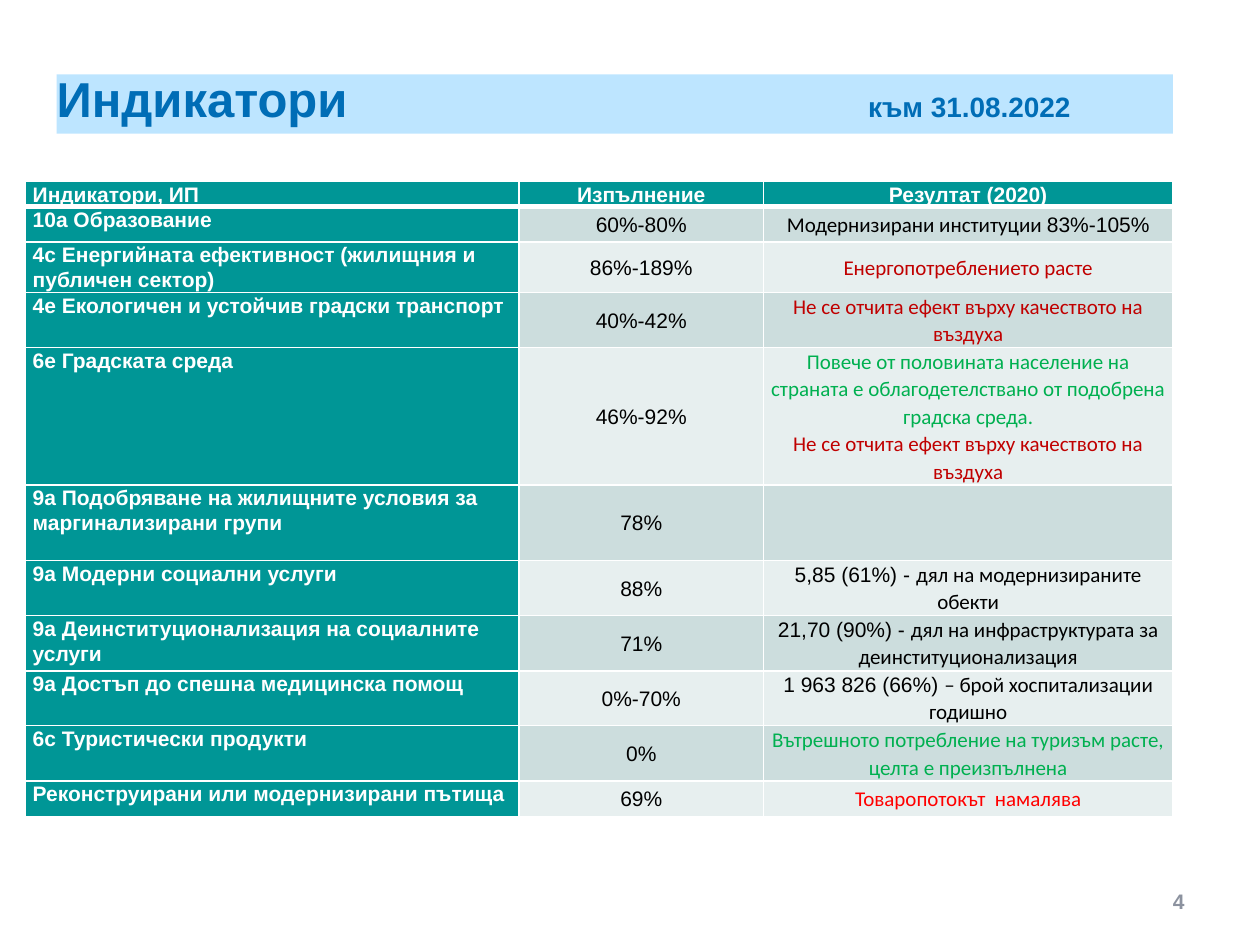
from dataclasses import dataclass

from lxml.etree import SubElement
from pptx import Presentation
from pptx.dml.color import RGBColor
from pptx.enum.text import MSO_ANCHOR, MSO_AUTO_SIZE, PP_ALIGN
from pptx.oxml.ns import qn
from pptx.util import Inches, Pt


@dataclass(frozen=True)
class Theme:
    head: str = "Arial"
    body: str = "Calibri"
    title_size: int = 28
    date_size: int = 16
    text_size: int = 12
    blue: str = "006DB6"
    pale_blue: str = "BDE5FF"
    teal: str = "009696"
    bands: tuple = ("CCDDDD", "E7EFEF")
    white: str = "FFFFFF"
    black: str = "000000"
    grey: str = "8C929F"
    dark_red: str = "C00000"
    red: str = "FF0000"
    green: str = "00B050"


T = Theme()

TITLE, DATE, PAGE = "Индикатори", "към 31.08.2022", "4"
HEADER = ("Индикатори, ИП", "Изпълнение", "Резултат (2020)")
COL_WIDTHS = (3.92, 1.94, 3.25)
HEADER_HEIGHT = 0.2
NO_AIR_EFFECT = ("Не се отчита ефект върху качеството на въздуха", T.body, T.dark_red)

# Each row: height, indicator, progress, result paragraphs made of (text, font, colour) runs.
ROWS = [
    (0.28, "10а Образование", "60%-80%",
     [[("Модернизирани институции ", T.body, T.black), ("83%-105%", T.head, T.black)]]),
    (0.39, "4с Енергийната ефективност (жилищния и публичен сектор)", "86%-189%",
     [[("Енергопотреблението расте", T.body, T.dark_red)]]),
    (0.44, "4е Екологичен и устойчив градски транспорт", "40%-42%", [[NO_AIR_EFFECT]]),
    (1.09, "6e Градската среда", "46%-92%",
     [[("Повече от половината население на страната е облагодетелствано от "
        "подобрена градска среда.", T.body, T.green)],
      [NO_AIR_EFFECT]]),
    (0.6, "9а Подобряване на жилищните условия за маргинализирани групи", "78%", []),
    (0.43, "9а Модерни социални услуги", "88%",
     [[("5,85 (61%) - ", T.head, T.black),
       ("дял на модернизираните обекти", T.body, T.black)]]),
    (0.44, "9а Деинституционализация на социалните услуги", "71%",
     [[("21,70 (90%) - ", T.head, T.black),
       ("дял на инфраструктурата за деинституционализация", T.body, T.black)]]),
    (0.43, "9а Достъп до спешна медицинска помощ", "0%-70%",
     [[("1 963 826 (66%) ", T.head, T.black),
       ("– брой хоспитализации годишно", T.body, T.black)]]),
    (0.44, "6с Туристически продукти", "0%",
     [[("Вътрешното потребление на туризъм расте, целта е преизпълнена",
        T.body, T.green)]]),
    (0.28, "Реконструирани или модернизирани пътища", "69%",
     [[("Товаропотокът  намалява", T.body, T.red)]]),
]


def add_run(p, text, font, color, size=T.text_size, bold=False):
    r = p.add_run()
    r.text = text
    r.font.name = font
    r.font.size = Pt(size)
    r.font.bold = bold
    r.font.color.rgb = RGBColor.from_string(color)


def set_margins(obj, side=0):
    obj.margin_left = obj.margin_right = Inches(side)
    obj.margin_top = obj.margin_bottom = 0


def set_borders(cell, widths):
    tc_pr = cell._tc.get_or_add_tcPr()
    for side, width in widths.items():
        ln = SubElement(tc_pr, qn(f"a:ln{side}"), w=str(Pt(width)))
        fill = SubElement(ln, qn("a:solidFill"))
        SubElement(fill, qn("a:srgbClr"), val=T.white)


def fill_cell(cell, paragraphs, fill, align, anchor, bold, borders):
    set_borders(cell, borders)
    cell.fill.solid()
    cell.fill.fore_color.rgb = RGBColor.from_string(fill)
    set_margins(cell, 0.06)
    cell.vertical_anchor = anchor
    tf = cell.text_frame
    for i, runs in enumerate(paragraphs):
        p = tf.add_paragraph() if i else tf.paragraphs[0]
        p.alignment = align
        p.line_spacing = 1.07
        for run in runs:
            add_run(p, *run, bold=bold)


def add_title(s):
    sp = s.shapes.title
    sp.left, sp.top, sp.width, sp.height = map(Inches, (0.45, 0.59, 8.86, 0.47))
    sp.fill.solid()
    sp.fill.fore_color.rgb = RGBColor.from_string(T.pale_blue)
    tf = sp.text_frame
    tf.auto_size = MSO_AUTO_SIZE.NONE
    tf.vertical_anchor = MSO_ANCHOR.TOP
    set_margins(tf)
    p = tf.paragraphs[0]
    p.alignment = PP_ALIGN.LEFT
    p.line_spacing = Pt(30)
    tabs = SubElement(p._p.get_or_add_pPr(), qn("a:tabLst"))
    SubElement(tabs, qn("a:tab"), pos=str(Inches(6.44)), algn="l")
    add_run(p, TITLE + "\t", T.head, T.blue, T.title_size, True)
    add_run(p, DATE, T.head, T.blue, T.date_size, True)


def add_indicators(s):
    heights = [HEADER_HEIGHT] + [row[0] for row in ROWS]
    table = s.shapes.add_table(
        len(heights), len(COL_WIDTHS), Inches(0.2), Inches(1.44),
        Inches(sum(COL_WIDTHS)), Inches(sum(heights))).table
    for col, width in zip(table.columns, COL_WIDTHS):
        col.width = Inches(width)
    for row, height in zip(table.rows, heights):
        row.height = Inches(height)

    top, middle = MSO_ANCHOR.TOP, MSO_ANCHOR.MIDDLE
    left, center = PP_ALIGN.LEFT, PP_ALIGN.CENTER
    thin = dict(L=1, R=1, T=1, B=1)
    for c, text in enumerate(HEADER):
        fill_cell(table.cell(0, c), [[(text, T.head, T.white)]], T.teal,
                  center if c else left, top, True, {**thin, "B": 3})
    for i, (_, name, progress, result) in enumerate(ROWS):
        band = T.bands[i % 2]
        borders = thin if i else {**thin, "T": 3}
        name_cell, progress_cell, result_cell = table.rows[i + 1].cells
        fill_cell(name_cell, [[(name, T.head, T.white)]], T.teal, left, top, True, borders)
        fill_cell(progress_cell, [[(progress, T.head, T.black)]], band, center, middle,
                  False, borders)
        fill_cell(result_cell, result, band, center, middle, False, borders)


def add_page_number(s):
    sp = s.shapes.add_textbox(*map(Inches, (7.17, 6.95, 2.33, 0.4)))
    tf = sp.text_frame
    tf.word_wrap = True
    tf.vertical_anchor = MSO_ANCHOR.MIDDLE
    p = tf.paragraphs[0]
    p.alignment = PP_ALIGN.RIGHT
    add_run(p, PAGE, T.head, T.grey, bold=True)


def main():
    prs = Presentation()
    prs.slide_width, prs.slide_height = Inches(10), Inches(7.5)
    s = prs.slides.add_slide(prs.slide_layouts.get_by_name("Title Only"))
    add_title(s)
    add_indicators(s)
    add_page_number(s)
    prs.save("out.pptx")


if __name__ == "__main__":
    main()
